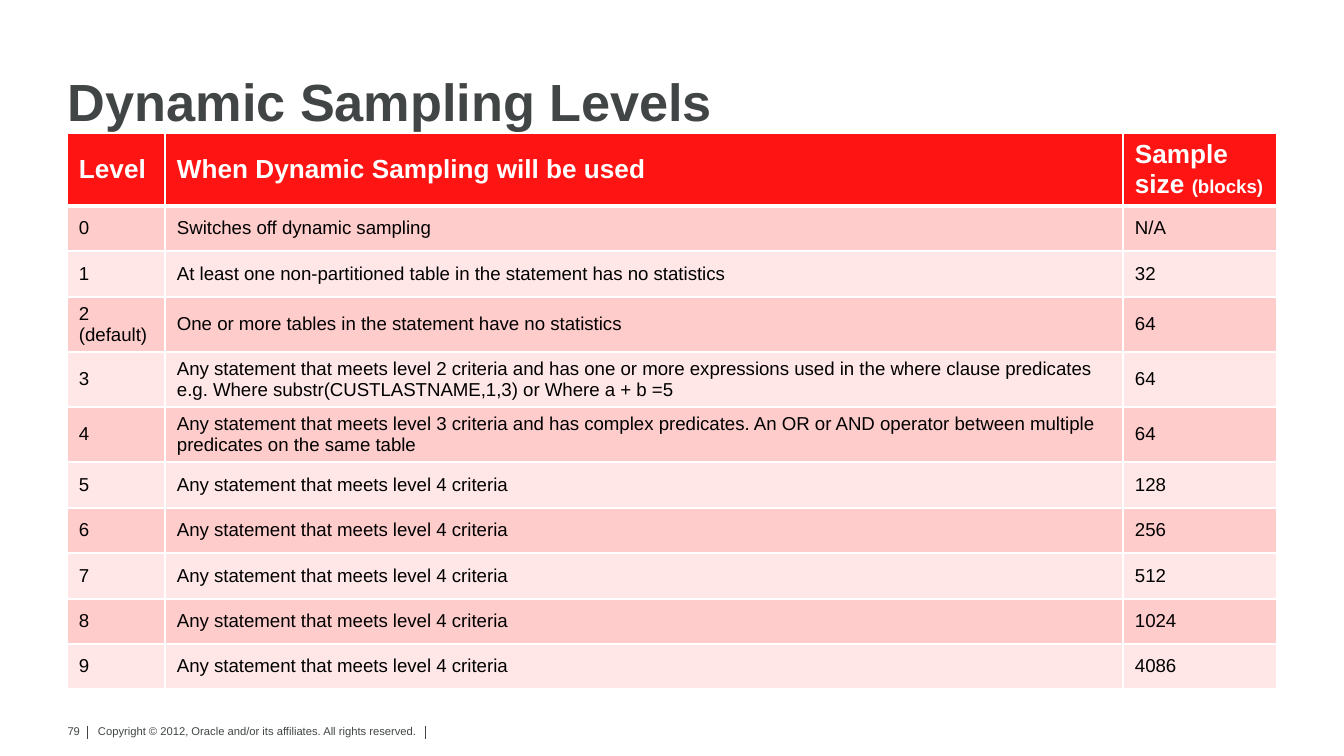
from lxml.etree import SubElement
from pptx import Presentation
from pptx.dml.color import RGBColor
from pptx.enum.shapes import MSO_CONNECTOR
from pptx.enum.text import MSO_ANCHOR, PP_ALIGN
from pptx.oxml.ns import qn
from pptx.util import Emu, Pt

COLORS = {
    "gray": "424545",
    "white": "FFFFFF",
    "black": "000000",
    "red": "FF1414",
    "dark band": "FFCCCC",
    "light band": "FFE7E7",
}
SAME_CRITERIA = "Any statement that meets level 4 criteria"
ROWS = [
    ("Level", "When Dynamic Sampling will be used", "Sample size "),
    ("0", "Switches off dynamic sampling", "N/A"),
    ("1", "At least one non-partitioned table in the statement has no statistics", "32"),
    ("2 (default)", "One or more tables in the statement have no statistics", "64"),
    ("3", "Any statement that meets level 2 criteria and has one or more expressions used in "
          "the where clause predicates e.g. Where substr(CUSTLASTNAME,1,3) or Where a + b =5", "64"),
    ("4", "Any statement that meets level 3 criteria and has complex predicates. An OR or AND "
          "operator between multiple predicates on the same table", "64"),
    ("5", SAME_CRITERIA, "128"),
    ("6", SAME_CRITERIA, "256"),
    ("7", SAME_CRITERIA, "512"),
    ("8", SAME_CRITERIA, "1024"),
    ("9", SAME_CRITERIA, "4086"),
]
COLUMN_WIDTHS = [98, 958, 154]
ROW_HEIGHTS = [73, 45, 46, 55, 55, 55, 46, 45, 46, 45, 45]


def px(length):
    return Emu(round(length * 914400 / 134.4))


def format_font(font, size, color, bold=False):
    font.name = "Arial"
    font.size = Pt(size)
    font.bold = bold
    font.color.rgb = RGBColor.from_string(COLORS[color])


presentation = Presentation()
presentation.slide_width = px(1344)
presentation.slide_height = px(756)
slide = presentation.slides.add_slide(presentation.slide_layouts[6])

# Footer: page number and copyright line between two thin rules
footer_texts = [
    ("79", (53, 718, 40, 27), (13, 7), PP_ALIGN.RIGHT, False),
    ("Copyright © 2012, Oracle and/or its affiliates. All rights reserved.",
     (93, 721, 368, 32), (5, 3), PP_ALIGN.LEFT, True),
]
for text, box, (side_margin, end_margin), alignment, wrap in footer_texts:
    text_frame = slide.shapes.add_textbox(*map(px, box)).text_frame
    text_frame.word_wrap = wrap
    text_frame.margin_left = text_frame.margin_right = px(side_margin)
    text_frame.margin_top = text_frame.margin_bottom = px(end_margin)
    text_frame.text = text
    paragraph = text_frame.paragraphs[0]
    paragraph.alignment = alignment
    format_font(paragraph.runs[0].font, 6, "gray")

for x in (87, 426):
    rule = slide.shapes.add_connector(MSO_CONNECTOR.STRAIGHT, px(x), px(726), px(x), px(739))
    rule.line.color.rgb = RGBColor.from_string(COLORS["gray"])
    rule.line.width = Pt(0.5)
    SubElement(rule._element.spPr, qn("a:effectLst"))

# Title
text_frame = slide.shapes.add_textbox(px(68), px(71), px(1209), px(62)).text_frame
text_frame.word_wrap = True
text_frame.vertical_anchor = MSO_ANCHOR.BOTTOM
text_frame.margin_left = text_frame.margin_right = 0
text_frame.margin_top = text_frame.margin_bottom = 0
text_frame.text = "Dynamic Sampling Levels"
paragraph = text_frame.paragraphs[0]
paragraph.line_spacing = 0.9
format_font(paragraph.runs[0].font, 28, "gray", bold=True)

# Table of sampling levels
table = slide.shapes.add_table(
    len(ROWS), len(COLUMN_WIDTHS), px(67), px(133), px(sum(COLUMN_WIDTHS)), px(sum(ROW_HEIGHTS))
).table
table.horz_banding = False
for column, width in zip(table.columns, COLUMN_WIDTHS):
    column.width = px(width)

for row_index, (texts, height) in enumerate(zip(ROWS, ROW_HEIGHTS)):
    table.rows[row_index].height = px(height)
    is_header = row_index == 0
    if is_header:
        fill_color = "red"
    else:
        fill_color = "dark band" if row_index % 2 else "light band"
    border_widths = {
        "a:lnL": 1,
        "a:lnR": 1,
        "a:lnT": 3 if row_index == 1 else 1,
        "a:lnB": 3 if is_header else 1,
    }
    for column_index, text in enumerate(texts):
        cell = table.cell(row_index, column_index)
        cell.vertical_anchor = MSO_ANCHOR.MIDDLE
        cell.margin_left, cell.margin_right = px(12), px(10)
        cell.margin_top = cell.margin_bottom = px(5)
        cell.text_frame.text = text
        font = cell.text_frame.paragraphs[0].runs[0].font
        if is_header:
            format_font(font, 14, "white", bold=True)
        else:
            format_font(font, 10, "black")
        cell_properties = cell._tc.get_or_add_tcPr()
        for tag, width in border_widths.items():
            border = SubElement(cell_properties, qn(tag), w=str(Pt(width)))
            border_fill = SubElement(border, qn("a:solidFill"))
            SubElement(border_fill, qn("a:srgbClr"), val=COLORS["white"])
        cell.fill.solid()
        cell.fill.fore_color.rgb = RGBColor.from_string(COLORS[fill_color])

unit_run = table.cell(0, 2).text_frame.paragraphs[0].add_run()
unit_run.text = "(blocks)"
format_font(unit_run.font, 10, "white", bold=True)

presentation.save("out.pptx")
